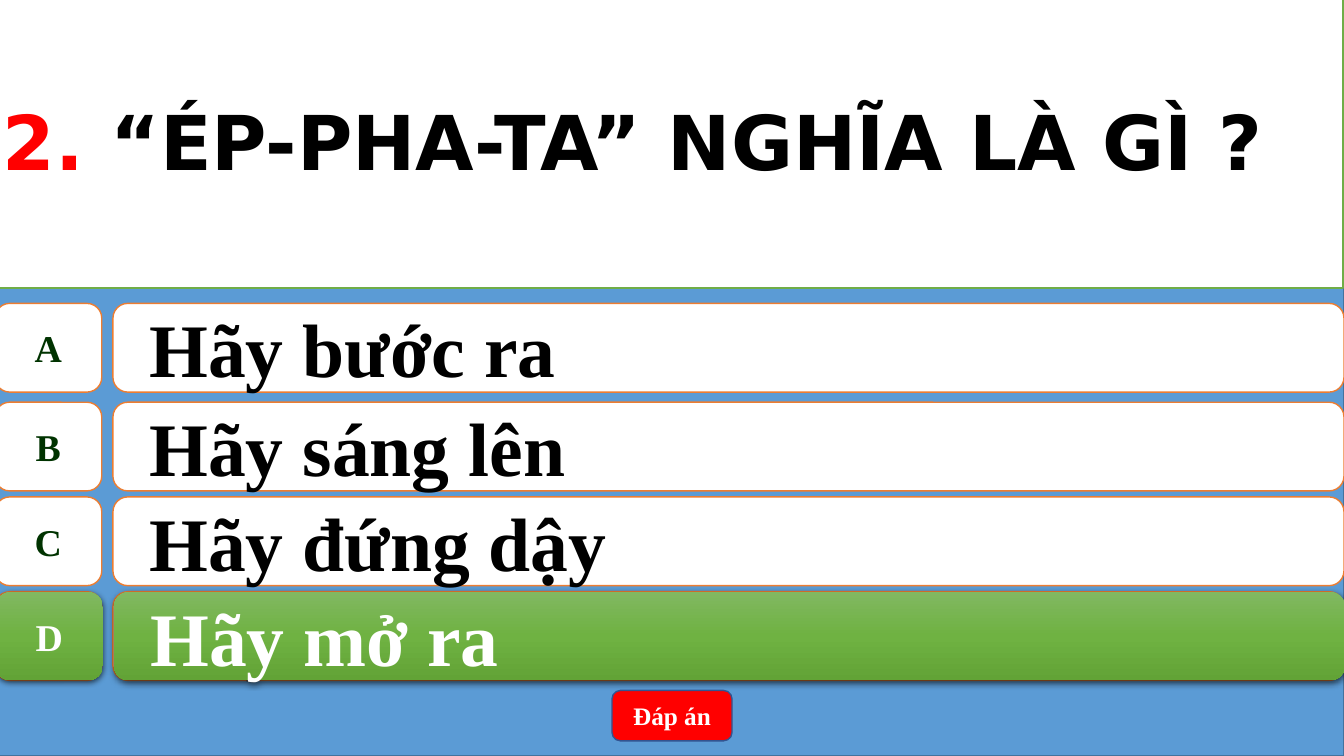
from copy import deepcopy
from dataclasses import dataclass

from lxml.etree import SubElement
from pptx import Presentation
from pptx.dml.color import RGBColor
from pptx.enum.shapes import MSO_SHAPE as Shape
from pptx.enum.text import MSO_ANCHOR as Anchor, PP_ALIGN as Align
from pptx.oxml.ns import qn
from pptx.util import Inches, Pt


@dataclass(frozen=True)
class Theme:
    backdrop: str = "5B9BD5"
    backdrop_edge: str = "43739E"
    paper: str = "FFFFFF"
    ink: str = "000000"
    letter: str = "003300"
    option_edge: str = "ED7D31"
    question_edge: str = "70AD47"
    accent: str = "FF0000"
    button_edge: str = "325491"
    correct: tuple = ((0, "81B861"), (0.5, "6FB242"), (1, "62A336"))
    serif: str = "Times New Roman"
    sans: str = "DejaVu Sans"
    large: int = 54
    medium: int = 27
    small: int = 18


THEME = Theme()
WIDTH, HEIGHT = 13.33, 7.5
BLEED = 0.05
ROW_HEIGHT, LETTER_WIDTH, COLUMN_GAP = 0.88, 1.06, 0.11
ROW_TOPS = [3.01] + [3.99 + 0.94 * row for row in range(3)]
ANSWERS = ["Hãy bước ra", "Hãy sáng lên", "Hãy đứng dậy", "Hãy mở ra"]
CORRECT = 3


def add_panel(slide, kind, box, fill, edge=None):
    panel = slide.shapes.add_shape(kind, *map(Inches, box))
    panel.shadow.inherit = False
    if isinstance(fill, str):
        panel.fill.solid()
        panel.fill.fore_color.rgb = RGBColor.from_string(fill)
    else:
        fill_gradient(panel, fill)
    if edge:
        panel.line.color.rgb = RGBColor.from_string(edge)
        panel.line.width = Pt(1)
    else:
        panel.line.fill.background()
    return panel


def fill_gradient(panel, colours):
    panel.fill.gradient()
    panel.fill.gradient_angle = 270
    stops = next(panel.element.spPr.iter(qn("a:gsLst")))
    while len(stops) < len(colours):
        stops.append(deepcopy(stops[0]))
    for stop, (position, colour) in zip(panel.fill.gradient_stops, colours):
        stop.position = position
        stop.color.rgb = RGBColor.from_string(colour)


def cast_shadow(panel):
    effects = panel.element.spPr.find(qn("a:effectLst"))
    shadow = SubElement(effects, qn("a:outerShdw"), blurRad=str(Pt(4.5)),
                        dist=str(Pt(1.5)), dir="5400000", rotWithShape="0")
    colour = SubElement(shadow, qn("a:srgbClr"), val=THEME.ink)
    SubElement(colour, qn("a:alpha"), val="63000")


def write(panel, runs, font, size, align=Align.CENTER, wrap=True):
    """Fill the panel with one bold paragraph of (text, colour) runs."""
    frame = panel.text_frame
    frame.word_wrap = wrap
    frame.vertical_anchor = Anchor.MIDDLE
    paragraph = frame.paragraphs[0]
    paragraph.alignment = align
    for text, colour in runs:
        run = paragraph.add_run()
        run.text = text
        for key, value in dict(name=font, size=Pt(size), bold=True).items():
            setattr(run.font, key, value)
        run.font.color.rgb = RGBColor.from_string(colour)
    return paragraph


def add_option(slide, box, letter, answer, revealed=False):
    left, top, width, height = box
    fill = THEME.correct if revealed else THEME.paper
    edge = None if revealed else THEME.option_edge
    answer_left = left + LETTER_WIDTH + COLUMN_GAP
    answer_width = width - LETTER_WIDTH - COLUMN_GAP

    badge = add_panel(slide, Shape.FLOWCHART_ALTERNATE_PROCESS,
                      (left, top, LETTER_WIDTH, height), fill, edge)
    bar = add_panel(slide, Shape.ROUNDED_RECTANGLE,
                    (answer_left, top, answer_width, height), fill, edge)
    if revealed:
        cast_shadow(badge)
        cast_shadow(bar)

    write(badge, [(letter, THEME.paper if revealed else THEME.letter)],
          THEME.serif, THEME.medium, wrap=False)
    line = write(bar, [(answer, THEME.paper if revealed else THEME.ink)],
                 THEME.serif, THEME.large, Align.LEFT)
    line.level = 1
    indents = line._p.get_or_add_pPr()
    indents.set("marL", str(Inches(0.5)))
    indents.set("indent", str(Inches(-0.28)))


def add_question(slide, box):
    panel = add_panel(slide, Shape.RECTANGLE, box, THEME.paper, THEME.question_edge)
    write(panel, [("2. ", THEME.accent), ("“ÉP-PHA-TA” NGHĨA LÀ GÌ ?", THEME.ink)],
          THEME.sans, THEME.large, Align.JUSTIFY)


def add_answer_button(slide, box):
    button = add_panel(slide, Shape.ROUNDED_RECTANGLE, box, THEME.accent, THEME.button_edge)
    write(button, [("Đáp án", THEME.paper)], THEME.serif, THEME.small)


def build_quiz_slide(slide):
    full_width = WIDTH + BLEED
    add_panel(slide, Shape.RECTANGLE, (-BLEED, 0, full_width, HEIGHT),
              THEME.backdrop, THEME.backdrop_edge)
    for letter, answer, top in zip("ABCD", ANSWERS, ROW_TOPS):
        add_option(slide, (-BLEED, top, full_width, ROW_HEIGHT), letter, answer)
    add_option(slide, (0.01 - BLEED, ROW_TOPS[CORRECT], full_width, ROW_HEIGHT),
               "ABCD"[CORRECT], ANSWERS[CORRECT], revealed=True)
    add_answer_button(slide, ((WIDTH - 1.19) / 2, 6.85, 1.19, 0.5))
    add_question(slide, (-0.07, -0.07, 13.39, 2.93))


def main():
    deck = Presentation()
    deck.slide_width, deck.slide_height = Inches(WIDTH), Inches(HEIGHT)
    build_quiz_slide(deck.slides.add_slide(deck.slide_layouts[6]))
    deck.save("out.pptx")


if __name__ == "__main__":
    main()
